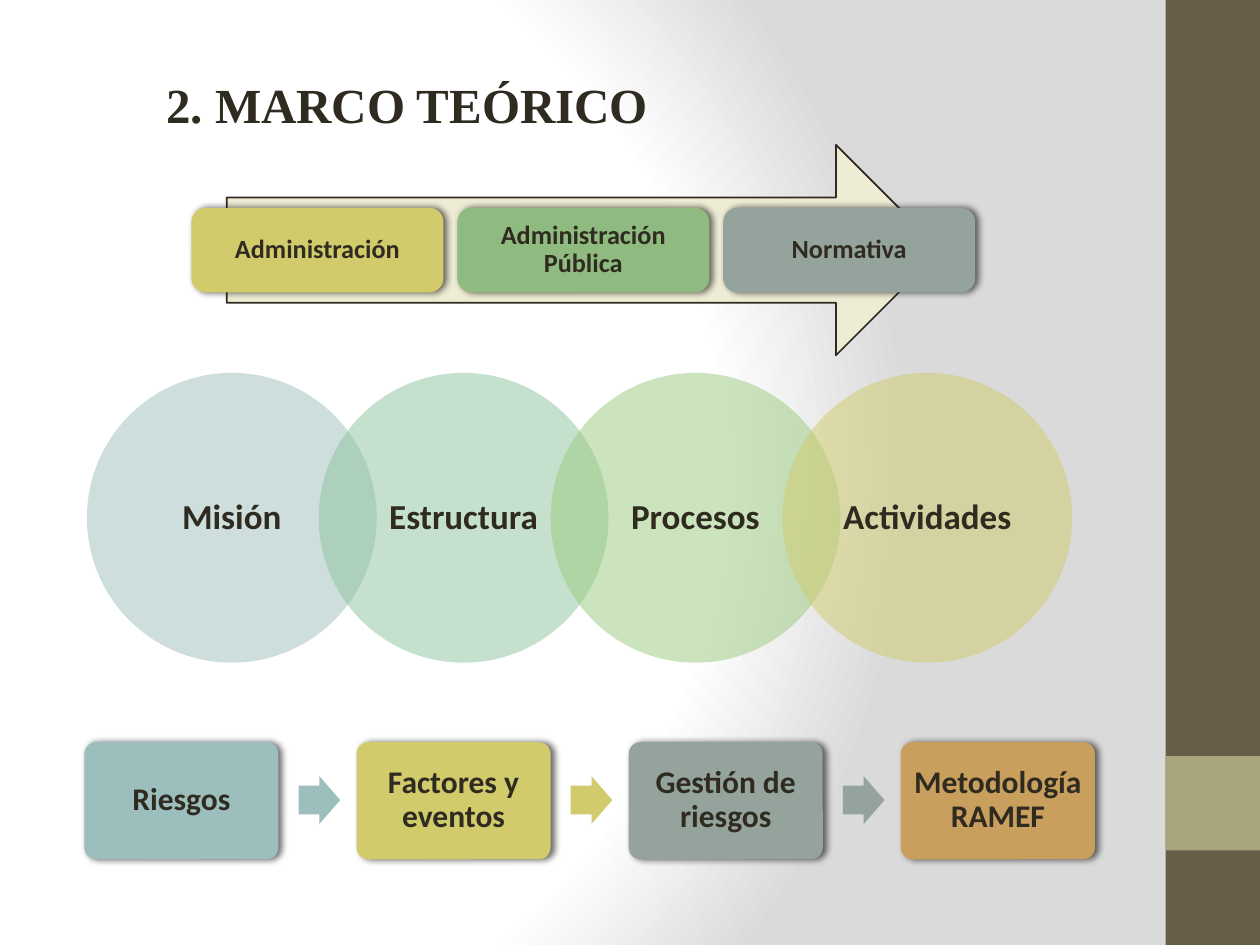
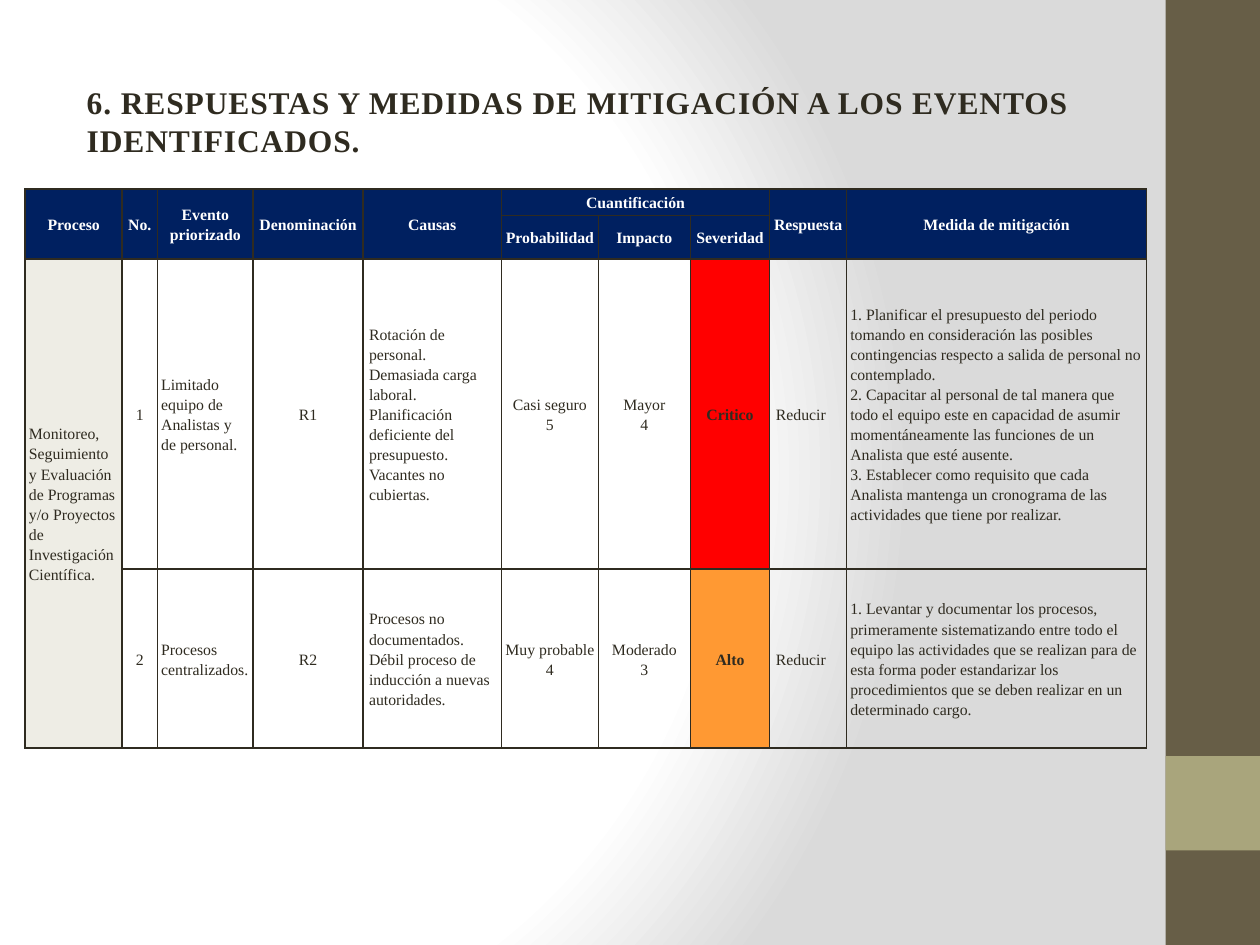
from lxml import etree
from pptx import Presentation
from pptx.dml.color import RGBColor
from pptx.enum.shapes import MSO_SHAPE
from pptx.enum.text import MSO_ANCHOR, PP_ALIGN
from pptx.oxml import parse_xml
from pptx.oxml.ns import nsdecls, qn
from pptx.util import Inches, Pt

RECT, ROUNDED = MSO_SHAPE.RECTANGLE, MSO_SHAPE.ROUNDED_RECTANGLE
OVAL, ARROW = MSO_SHAPE.OVAL, MSO_SHAPE.RIGHT_ARROW
TOP, MIDDLE, BOTTOM = MSO_ANCHOR.TOP, MSO_ANCHOR.MIDDLE, MSO_ANCHOR.BOTTOM
LEFT, CENTER = PP_ALIGN.LEFT, PP_ALIGN.CENTER

# Shared theme
INK, WHITE, NAVY = "2F2B20", "FFFFFF", "002060"
OLIVE, SAGE = "675E47", "A9A57C"
TEAL, MUSTARD, GRAY, OCHRE = "9CBEBD", "D2CB6C", "95A39D", "C89F5D"
GREEN, MINT, LIME = "8FBB80", "8DC49D", "9BCA7D"
SERIF, SANS = "Times New Roman", "Calibri"
GRADIENT = [(0, WHITE), (75, WHITE), (100, "DADADA")]

# Risk response table
COLUMNS = [0.77, 0.28, 0.76, 0.87, 1.1, 0.77, 0.73, 0.63, 0.61, 2.38]
ROWS = [0.21, 0.32, 2.46, 1.42]
CAUSES, SEVERITY, RESPONSE = 4, 7, 8
LEFT_COLUMNS = {0, 2, CAUSES, RESPONSE, 9}
INDENTED_COLUMNS = {CAUSES, RESPONSE}
CELL_FILLS = {(2, 0): "EEEDE5", (2, SEVERITY): "FF0000", (3, SEVERITY): "FF9933"}
MERGES = [(0, c, 1, c) for c in (0, 1, 2, 3, 4, 8, 9)] + [(0, 5, 0, 7), (2, 0, 3, 0)]
# "\v" breaks a line, "\n" starts a paragraph
RISKS = [
    ["Proceso", "No.", "Evento priorizado", "Denominación", "Causas",
     "Cuantificación", "", "", "Respuesta", "Medida de mitigación"],
    ["", "", "", "", "", "Probabilidad", "Impacto", "Severidad", "", ""],
    ["Monitoreo, Seguimiento y Evaluación de Programas y/o Proyectos de "
     "Investigación Científica.",
     "1", "Limitado equipo de Analistas y de personal.", "R1",
     "Rotación de personal.\vDemasiada carga laboral.\v"
     "Planificación deficiente del presupuesto.\vVacantes no cubiertas.",
     "Casi seguro\n5", "Mayor\n4", "Critico", "Reducir",
     "1. Planificar el presupuesto del periodo tomando en consideración las "
     "posibles contingencias respecto a salida de personal no contemplado.\v"
     "2. Capacitar al personal de tal manera que todo el equipo este en "
     "capacidad de asumir momentáneamente las funciones de un Analista que "
     "esté ausente.\v"
     "3. Establecer como requisito que cada Analista mantenga un cronograma "
     "de las actividades que tiene por realizar."],
    ["", "2", "Procesos centralizados.", "R2",
     "Procesos no documentados.\vDébil proceso de inducción a nuevas autoridades.",
     "Muy probable\n4", "Moderado\n3", "Alto", "Reducir",
     "1. Levantar y documentar los procesos, primeramente sistematizando entre "
     "todo el equipo las actividades que se realizan para de esta forma poder "
     "estandarizar los procedimientos que se deben realizar en un determinado "
     "cargo."],
]


def rgb(color):
    return RGBColor.from_string(color)


def style_text(tf, text, size, font, color=INK, bold=True, align=LEFT, spacing=None):
    tf.text = text
    for p in tf.paragraphs:
        p.alignment, p.line_spacing = align, spacing
        p.font.size, p.font.name, p.font.bold = Pt(size), font, bold
        p.font.color.rgb = rgb(color)


def set_margins(target, across, down):
    target.margin_left = target.margin_right = Inches(across)
    target.margin_top = target.margin_bottom = Inches(down)


def add_block(slide, kind, x, y, w, h, fill, line=None, adjust=(), alpha=None):
    sp = slide.shapes.add_shape(kind, Inches(x), Inches(y), Inches(w), Inches(h))
    sp.shadow.inherit = False
    sp.fill.solid()
    sp.fill.fore_color.rgb = rgb(fill)
    if line:
        sp.line.color.rgb, sp.line.width = rgb(line), Pt(1)
    else:
        sp.line.fill.background()
    for i, value in enumerate(adjust):
        sp.adjustments[i] = value
    if alpha:
        clr = sp._element.spPr.find(".//" + qn("a:srgbClr"))
        etree.SubElement(clr, qn("a:alpha"), val=str(alpha * 1000))
    return sp


def add_shadow(sp):
    effects = sp._element.spPr.find(qn("a:effectLst"))
    effects.append(parse_xml(
        f'<a:outerShdw {nsdecls("a")} blurRad="{Pt(4)}" dist="{Pt(2)}" dir="0" '
        'rotWithShape="0"><a:srgbClr val="000000"><a:alpha val="60000"/>'
        '</a:srgbClr></a:outerShdw>'))


def add_label(sp, text, size, across, down):
    tf = sp.text_frame
    tf.word_wrap, tf.vertical_anchor = True, MIDDLE
    set_margins(tf, across, down)
    style_text(tf, text, size, SANS, align=CENTER, spacing=0.9)


def add_card(slide, text, size, inset, *box, fill, adjust=()):
    sp = add_block(slide, ROUNDED, *box, fill, adjust=adjust)
    add_shadow(sp)
    add_label(sp, text, size, inset, inset)


def add_title(slide, text, x, y, w, h, size, anchor=TOP, tracking=0):
    tf = slide.shapes.add_textbox(Inches(x), Inches(y), Inches(w), Inches(h)).text_frame
    tf.word_wrap, tf.vertical_anchor = True, anchor
    style_text(tf, text, size, SERIF)
    if tracking:
        font = tf.paragraphs[0]._p.find(".//" + qn("a:defRPr"))
        font.set("spc", str(int(tracking * 100)))
        for r in tf.paragraphs[0].runs:
            r._r.get_or_add_rPr().set("spc", str(int(tracking * 100)))


def add_base_slide(prs):
    slide = prs.slides.add_slide(prs.slide_layouts[6])
    # Radial background
    slide.background.fill.gradient()
    old = slide._element.find(".//" + qn("a:gradFill"))
    stops = "".join(f'<a:gs pos="{pos * 1000}"><a:srgbClr val="{color}"/></a:gs>'
                    for pos, color in GRADIENT)
    old.getparent().replace(old, parse_xml(
        f'<a:gradFill {nsdecls("a")} rotWithShape="1"><a:gsLst>{stops}</a:gsLst>'
        '<a:path path="circle"><a:fillToRect l="20000" t="50000" r="100000" '
        'b="50000"/></a:path></a:gradFill>'))
    # Side band
    add_block(slide, RECT, 9.25, 0, 0.75, 7.5, OLIVE)
    add_block(slide, RECT, 9.25, 6, 0.75, 0.75, SAGE)
    return slide


def add_borders(cell):
    tcPr = cell._tc.get_or_add_tcPr()
    for side in ("lnL", "lnR", "lnT", "lnB"):
        tcPr.append(parse_xml(
            f'<a:{side} {nsdecls("a")} w="{Pt(1)}"><a:solidFill>'
            f'<a:srgbClr val="{INK}"/></a:solidFill></a:{side}>'))


def style_cell(cell, row, col, text):
    header = row < 2
    align = LEFT if not header and col in LEFT_COLUMNS else CENTER
    indented = not header and col in INDENTED_COLUMNS
    style_text(cell.text_frame, text, 9, SERIF, WHITE if header else INK,
               header or col == SEVERITY, align, 1.15)
    cell.vertical_anchor = MIDDLE
    set_margins(cell, 0.05 if indented else 0.03, 0)
    add_borders(cell)
    fill = NAVY if header else CELL_FILLS.get((row, col))
    if fill:
        cell.fill.solid()
        cell.fill.fore_color.rgb = rgb(fill)
    else:
        cell.fill.background()


def add_risk_table(slide, x, y):
    table = slide.shapes.add_table(len(ROWS), len(COLUMNS), Inches(x), Inches(y),
                                   Inches(sum(COLUMNS)), Inches(sum(ROWS))).table
    table.first_row = table.horz_banding = False
    for column, width in zip(table.columns, COLUMNS):
        column.width = Inches(width)
    for row, height in zip(table.rows, ROWS):
        row.height = Inches(height)
    for r, texts in enumerate(RISKS):
        for c, text in enumerate(texts):
            style_cell(table.cell(r, c), r, c, text)
    for top, left, bottom, right in MERGES:
        table.cell(top, left).merge(table.cell(bottom, right))


def build_framework(prs):
    slide = add_base_slide(prs)
    add_title(slide, "2. MARCO TEÓRICO", 1.22, 0.54, 5.91, 0.57, 28)

    # Topics along the arrow
    add_block(slide, ARROW, 1.8, 1.15, 5.67, 1.67, "EEECD4", line=INK)
    topics = [("Administración", MUSTARD), ("Administración Pública", GREEN),
              ("Normativa", GRAY)]
    for i, (text, fill) in enumerate(topics):
        add_card(slide, text, 15, 0.06, 1.52 + 2.11 * i, 1.65, 2, 0.67, fill=fill)

    # Overlapping circles
    size = 2.3
    circles = [("Misión", TEAL), ("Estructura", MINT), ("Procesos", LIME),
               ("Actividades", MUSTARD)]
    for i, (text, fill) in enumerate(circles):
        sp = add_block(slide, OVAL, 0.69 + 0.8 * size * i, 2.96, size, size, fill, alpha=50)
        add_label(sp, text, 20, 0.13, 0.03)

    # Risk steps, with an arrow after each but the last
    steps = [("Riesgos", TEAL), ("Factores y eventos", MUSTARD),
             ("Gestión de riesgos", GRAY), ("Metodología RAMEF", OCHRE)]
    for i, (text, fill) in enumerate(steps):
        x = 0.67 + 2.16 * i
        add_card(slide, text, 18, 0.07, x, 5.89, 1.54, 0.93, fill=fill, adjust=[0.1])
        if i < len(steps) - 1:
            add_block(slide, ARROW, x + 1.7, 6.16, 0.33, 0.38, fill, adjust=[0.6, 0.5])


def build_responses(prs):
    slide = add_base_slide(prs)
    add_title(slide, "6. RESPUESTAS Y MEDIDAS DE MITIGACIÓN A LOS EVENTOS IDENTIFICADOS.",
              0.59, 0.29, 8.5, 1.02, 18, BOTTOM, tracking=0.5)
    add_risk_table(slide, 0.2, 1.5)


def main():
    prs = Presentation()
    prs.slide_width, prs.slide_height = Inches(10), Inches(7.5)
    build_framework(prs)
    build_responses(prs)
    prs.save("out.pptx")


if __name__ == "__main__":
    main()
